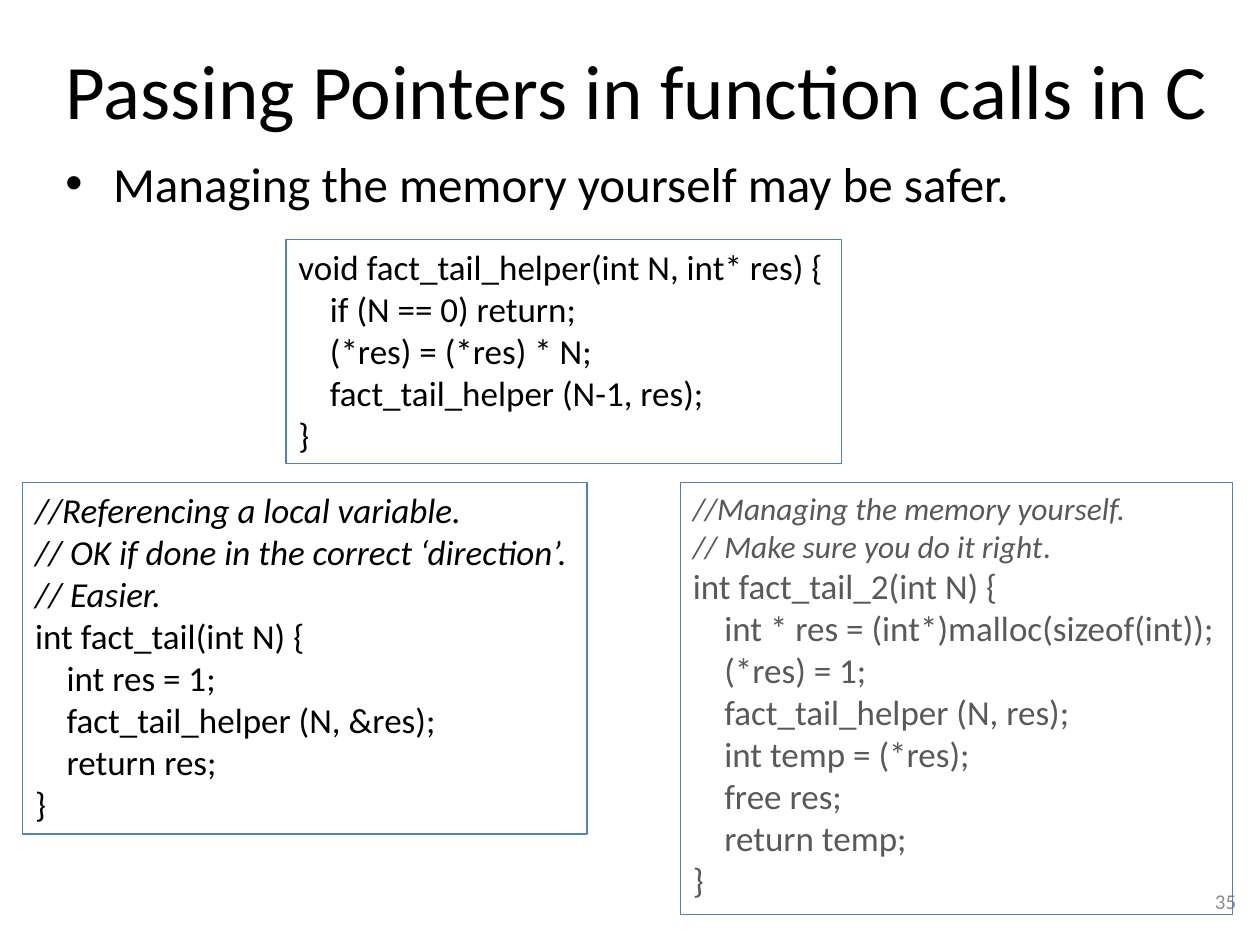
from lxml import etree
from pptx import Presentation
from pptx.dml.color import RGBColor
from pptx.enum.shapes import MSO_SHAPE
from pptx.enum.text import MSO_ANCHOR, MSO_AUTO_SIZE, PP_ALIGN
from pptx.oxml.ns import qn
from pptx.util import Inches, Pt

BLACK, GREY, PALE, BLUE = "000000", "595959", "8C8C8C", "4F81BD"

HELPER = [
    "void fact_tail_helper(int N, int* res) {",
    "\tif (N == 0) return;",
    "\t(*res) = (*res) * N;",
    "\tfact_tail_helper (N-1, res);",
    "}",
]
LOCAL_VARIABLE = [
    "//Referencing a local variable.",
    "// OK if done in the correct ‘direction’.",
    "// Easier.",
    "int fact_tail(int N) {",
    "\tint res = 1;",
    "\tfact_tail_helper (N, &res);",
    "\treturn res;",
    "}",
]
OWN_MEMORY = [
    "//Managing the memory yourself.",
    "// Make sure you do it right",
    "int fact_tail_2(int N) {",
    "\tint * res = (int*)malloc(sizeof(int));",
    "\t(*res) = 1;",
    "\tfact_tail_helper (N, res);",
    "\tint temp = (*res);",
    "\tfree res;",
    "\treturn temp;",
    "}",
]


def rgb(value):
    return RGBColor.from_string(value)


def add_run(p, text, size, color=BLACK, italic=False):
    r = p.add_run()
    r.text = text
    formats = {"name": "Calibri", "size": Pt(size), "italic": italic}
    for name, value in formats.items():
        setattr(r.font, name, value)
    r.font.color.rgb = rgb(color)


def set_indent(p, left, first=0):
    pPr = p._p.get_or_add_pPr()
    pPr.set("marL", str(Inches(left)))
    pPr.set("indent", str(Inches(first)))
    return pPr


def add_text(slide, box, text, size, color=BLACK,
             align=PP_ALIGN.LEFT, anchor=MSO_ANCHOR.MIDDLE):
    """Add a one-paragraph text box and return its paragraph."""
    tf = slide.shapes.add_textbox(*map(Inches, box)).text_frame
    tf.word_wrap = True
    tf.vertical_anchor = anchor
    p = tf.paragraphs[0]
    p.alignment = align
    add_run(p, text, size, color)
    return p


def add_bullet(slide, box, text, size):
    p = add_text(slide, box, text, size, anchor=MSO_ANCHOR.TOP)
    p.space_before = Pt(size * 0.2)
    pPr = set_indent(p, 0.38, -0.38)
    etree.SubElement(pPr, qn("a:buFont"), typeface="Arial")
    etree.SubElement(pPr, qn("a:buChar"), char="•")


def add_code(slide, box, lines, color=BLACK, comment_size=20):
    """Add a framed listing: comments are italic, a leading tab indents."""
    s = slide.shapes.add_shape(MSO_SHAPE.RECTANGLE, *map(Inches, box))
    s.shadow.inherit = False
    s.fill.background()
    s.line.color.rgb = rgb(BLUE)
    s.line.width = Pt(0.75)
    tf = s.text_frame
    tf.word_wrap = False
    tf.auto_size = MSO_AUTO_SIZE.SHAPE_TO_FIT_TEXT
    tf.vertical_anchor = MSO_ANCHOR.TOP
    for i, line in enumerate(lines):
        p = tf.add_paragraph() if i else tf.paragraphs[0]
        p.alignment = PP_ALIGN.LEFT
        if line.startswith("\t"):
            set_indent(p, 0.25)
        comment = line.startswith("//")
        add_run(p, line.strip(), comment_size if comment else 20, color, comment)
    return tf


def main():
    prs = Presentation()
    prs.slide_width, prs.slide_height = Inches(10), Inches(7.5)
    slide = prs.slides.add_slide(prs.slide_layouts[6])

    add_text(slide, (0.33, 0.08, 9.45, 1.25),
             "Passing Pointers in function calls in C", 44, align=PP_ALIGN.CENTER)
    add_bullet(slide, (0.42, 1.17, 9, 1.58),
               "Managing the memory yourself may be safer.", 28)
    add_text(slide, (7.58, 6.95, 2.33, 0.4), "35", 12, PALE, PP_ALIGN.RIGHT)

    tf = add_code(slide, (5.4, 3.83, 4.38, 3.43), OWN_MEMORY, GREY, 18)
    add_run(tf.paragraphs[1], ".", 18, GREY)
    add_code(slide, (0.18, 3.83, 4.48, 2.79), LOCAL_VARIABLE)
    add_code(slide, (2.27, 1.9, 4.41, 1.78), HELPER)

    prs.save("out.pptx")


if __name__ == "__main__":
    main()
